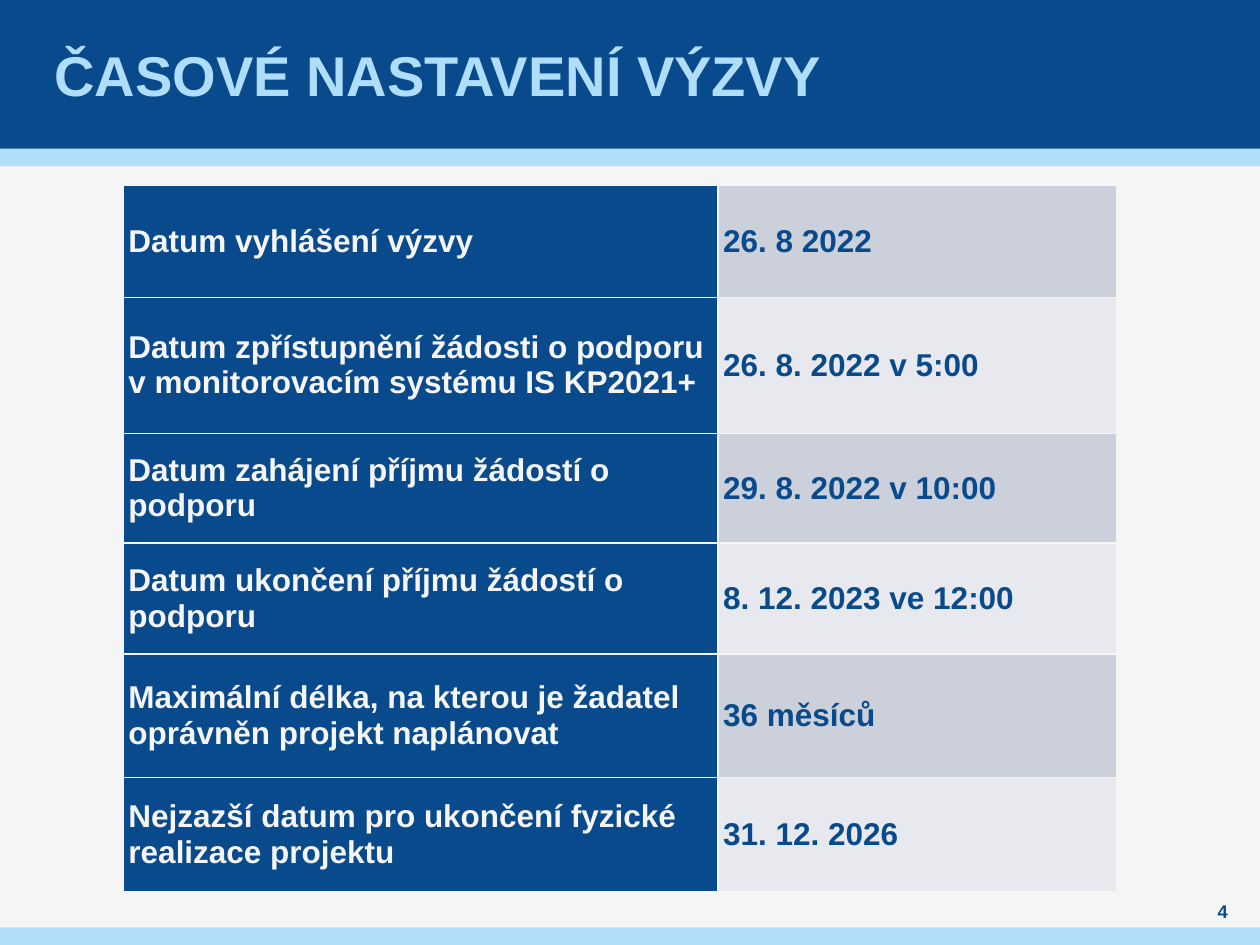
from lxml import etree
from pptx import Presentation
from pptx.dml.color import RGBColor
from pptx.enum import shapes, text
from pptx.oxml import ns
from pptx.util import Inches, Pt

NAVY = RGBColor(0x08, 0x4A, 0x8B)
SKY = RGBColor(0xAF, 0xDD, 0xFA)
PAPER = RGBColor(0xF5, 0xF5, 0xF5)
BANDS = (RGBColor(0xCC, 0xD0, 0xDA), RGBColor(0xE7, 0xE9, 0xEE))
FONT = "Arial"

COLUMN_WIDTHS = (4.72, 3.16)
SCHEDULE = (  # row height, milestone, date
    (0.89, "Datum vyhlášení výzvy", "26. 8 2022"),
    (1.08, "Datum zpřístupnění žádosti o podporu v monitorovacím systému IS KP2021+",
     "26. 8. 2022 v 5:00"),
    (0.87, "Datum zahájení příjmu žádostí o podporu", "29. 8. 2022 v 10:00"),
    (0.88, "Datum ukončení příjmu žádostí o podporu", "8. 12. 2023 ve 12:00"),
    (0.98, "Maximální délka, na kterou je žadatel oprávněn projekt naplánovat",
     "36 měsíců"),
    (0.91, "Nejzazší datum pro ukončení fyzické realizace projektu", "31. 12. 2026"),
)


def style_font(para, size, color):
    font = para.font
    font.name, font.size, font.bold = FONT, Pt(size), True
    font.color.rgb = color


def set_margins(target, side):
    target.margin_left = target.margin_right = Inches(side)
    target.margin_top = target.margin_bottom = 0


def add_bar(page, top, height, color):
    """Draw a full-width bar behind the title."""
    bar = page.shapes.add_shape(shapes.MSO_SHAPE.RECTANGLE, 0, Inches(top),
                                Inches(10), Inches(height))
    bar.shadow.inherit = False
    bar.fill.solid()
    bar.fill.fore_color.rgb = color
    bar.line.fill.background()
    page.shapes.title.element.addprevious(bar.element)


def place_title(page, wording, left, top, width, height):
    title = page.shapes.title
    title.left, title.top = Inches(left), Inches(top)
    title.width, title.height = Inches(width), Inches(height)
    frame = title.text_frame
    frame.text = wording
    frame.word_wrap = True
    frame.auto_size = text.MSO_AUTO_SIZE.NONE
    frame.vertical_anchor = text.MSO_ANCHOR.MIDDLE
    set_margins(frame, 0.04)
    para = frame.paragraphs[0]
    para.alignment = text.PP_ALIGN.LEFT
    style_font(para, 32, SKY)


def add_page_number(page, number, left, top, width, height):
    box = page.shapes.add_textbox(Inches(left), Inches(top), Inches(width), Inches(height))
    frame = box.text_frame
    frame.text = number
    frame.word_wrap = True
    frame.vertical_anchor = text.MSO_ANCHOR.MIDDLE
    set_margins(frame, 0)
    para = frame.paragraphs[0]
    para.alignment = text.PP_ALIGN.CENTER
    style_font(para, 10.5, NAVY)


def set_borders(cell, color, width):
    properties = cell._tc.get_or_add_tcPr()
    for position, side in enumerate(("a:lnL", "a:lnR", "a:lnT", "a:lnB")):
        line = etree.Element(ns.qn(side), w=str(Pt(width)))
        fill = etree.SubElement(line, ns.qn("a:solidFill"))
        etree.SubElement(fill, ns.qn("a:srgbClr"), val=str(color))
        properties.insert(position, line)


def fill_cell(cell, wording, fill, color):
    cell.text = wording
    cell.fill.solid()
    cell.fill.fore_color.rgb = fill
    cell.vertical_anchor = text.MSO_ANCHOR.MIDDLE
    set_margins(cell, 0)
    cell.margin_left = Inches(0.04)
    para = cell.text_frame.paragraphs[0]
    para.space_before = para.space_after = Pt(3)
    style_font(para, 18, color)
    set_borders(cell, PAPER, 1)


def add_schedule(page, left, top):
    width = sum(COLUMN_WIDTHS)
    height = sum(row[0] for row in SCHEDULE)
    table = page.shapes.add_table(len(SCHEDULE), len(COLUMN_WIDTHS), Inches(left),
                                  Inches(top), Inches(width), Inches(height)).table
    table.first_row = table.horz_banding = False
    for column, column_width in zip(table.columns, COLUMN_WIDTHS):
        column.width = Inches(column_width)
    for index, (row_height, milestone, date) in enumerate(SCHEDULE):
        table.rows[index].height = Inches(row_height)
        fill_cell(table.cell(index, 0), milestone, NAVY, PAPER)
        fill_cell(table.cell(index, 1), date, BANDS[index % 2], NAVY)


def main():
    deck = Presentation()
    deck.slide_width, deck.slide_height = Inches(10), Inches(7.5)
    page = deck.slides.add_slide(deck.slide_layouts.get_by_name("Title Only"))
    page.background.fill.solid()
    page.background.fill.fore_color.rgb = PAPER
    add_bar(page, 1.18, 0.14, SKY)
    add_bar(page, 0, 1.18, NAVY)
    add_bar(page, 7.36, 0.14, SKY)
    place_title(page, "ČASOVÉ NASTAVENÍ VÝZVY", 0.39, 0, 9.21, 1.18)
    add_page_number(page, "4", 9.45, 7.13, 0.51, 0.2)
    add_schedule(page, 0.98, 1.47)
    deck.save("out.pptx")


if __name__ == "__main__":
    main()
